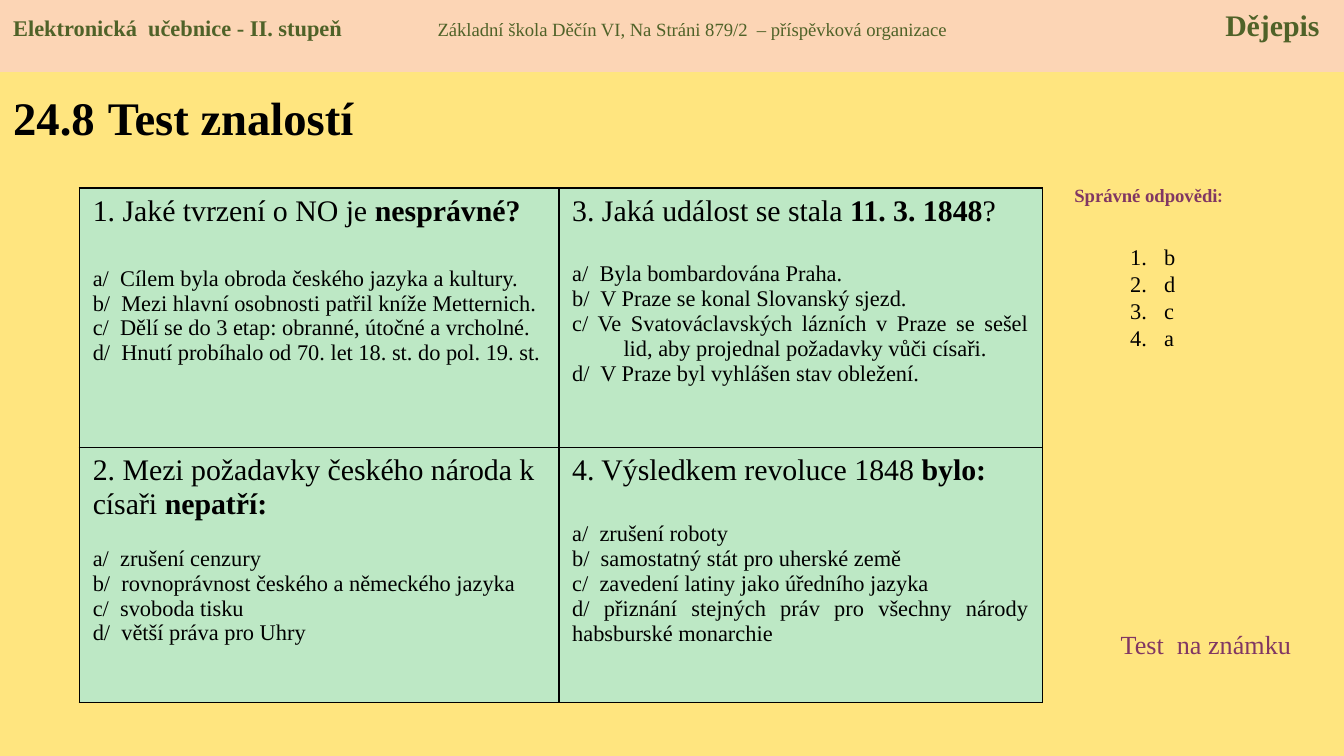
import lxml.etree
import pptx
import pptx.dml.color
import pptx.enum.shapes
import pptx.enum.text
import pptx.oxml
import pptx.oxml.ns
import pptx.util

Cm = pptx.util.Cm
Pt = pptx.util.Pt
ALIGN = pptx.enum.text.PP_ALIGN
ANCHOR = pptx.enum.text.MSO_ANCHOR

COLORS = {
    "background": "FFE57F",
    "header": "FCD5B5",
    "header_text": "4F6228",
    "cell": "BDE8C5",
    "accent": "813763",
    "text": "000000",
}


class TestSlide:
    """Holds the style and the current slide of the knowledge test."""

    font_name = "Times New Roman"

    def __init__(self, presentation):
        self.slide = presentation.slides.add_slide(presentation.slide_layouts[6])
        self.paint(self.slide.background.fill, "background")

    def color(self, name):
        return pptx.dml.color.RGBColor.from_string(COLORS[name])

    def paint(self, fill, name):
        fill.solid()
        fill.fore_color.rgb = self.color(name)

    def apply(self, target, values):
        for name, value in values.items():
            setattr(target, name, value)

    def add_paragraphs(self, frame, paragraphs, color="text"):
        frame.word_wrap = True
        for index, (runs, values) in enumerate(paragraphs):
            paragraph = frame.paragraphs[0] if index == 0 else frame.add_paragraph()
            self.apply(paragraph, values)
            for text, size, bold, *font_name in runs:
                run = paragraph.add_run()
                run.text = text
                font = {"size": Pt(size), "bold": bold, "name": (font_name or [self.font_name])[0]}
                self.apply(run.font, font)
                run.font.color.rgb = self.color(color)
        return frame.paragraphs

    def indent(self, paragraph, length):
        properties = paragraph._p.get_or_add_pPr()
        properties.set("marL", str(length))
        properties.set("indent", str(-length))
        return properties

    def text(self, box, paragraphs, color="text", anchor=ANCHOR.TOP):
        shape = self.slide.shapes.add_textbox(*map(Cm, box))
        shape.text_frame.vertical_anchor = anchor
        return self.add_paragraphs(shape.text_frame, paragraphs, color)

    def numbered_list(self, box, items):
        values = {"line_spacing": Pt(14.5)}
        for paragraph in self.text(box, [([(item, 12, False)], values) for item in items]):
            properties = self.indent(paragraph, Cm(0.64))
            number = lxml.etree.SubElement(properties, pptx.oxml.ns.qn("a:buAutoNum"))
            number.set("type", "arabicPeriod")

    def header(self, box, runs, tabs):
        rectangle = pptx.enum.shapes.MSO_SHAPE.RECTANGLE
        shape = self.slide.shapes.add_shape(rectangle, *map(Cm, box))
        shape.shadow.inherit = False
        shape.line.fill.background()
        self.paint(shape.fill, "header")
        shape.text_frame.vertical_anchor = ANCHOR.TOP
        paragraphs = self.add_paragraphs(
            shape.text_frame, [(runs, {"alignment": ALIGN.LEFT})], "header_text"
        )
        properties = paragraphs[0]._p.get_or_add_pPr()
        tab_list = lxml.etree.SubElement(properties, pptx.oxml.ns.qn("a:tabLst"))
        for position, alignment in tabs:
            tab = lxml.etree.SubElement(tab_list, pptx.oxml.ns.qn("a:tab"))
            tab.set("pos", str(Cm(position)))
            tab.set("algn", alignment)

    def border(self, cell):
        properties = cell._tc.get_or_add_tcPr()
        for side in ("lnL", "lnR", "lnT", "lnB"):
            properties.append(pptx.oxml.parse_xml(
                f'<a:{side} {pptx.oxml.ns.nsdecls("a")} w="{Pt(1)}"><a:solidFill>'
                f'<a:srgbClr val="{COLORS["text"]}"/></a:solidFill></a:{side}>'
            ))

    def question(self, cell, heading, options, gap, alignment, indent):
        self.border(cell)
        self.paint(cell.fill, "cell")
        runs = [(text, 16, bold) for text, bold in heading]
        paragraphs = [(runs, {"alignment": alignment})]
        for index, option in enumerate(options):
            values = {"alignment": alignment, "space_before": Pt(0 if index else gap)}
            paragraphs.append(([(option, 12, False)], values))
        for paragraph in self.add_paragraphs(cell.text_frame, paragraphs)[1:]:
            self.indent(paragraph, Cm(indent))

    def questions(self, left, top, widths, heights, rows):
        table = self.slide.shapes.add_table(
            len(heights), len(widths), Cm(left), Cm(top), Cm(sum(widths)), Cm(sum(heights))
        ).table
        self.apply(table, {"first_row": False, "horz_banding": False})
        for column, width in zip(table.columns, widths):
            column.width = Cm(width)
        for row, height, contents in zip(table.rows, heights, rows):
            row.height = Cm(height)
            for cell, content in zip(row.cells, contents):
                self.question(cell, *content)


QUESTIONS = [
    [
        (
            [("1. Jaké tvrzení o NO je ", False), ("nesprávné?", True)],
            [
                "a/  Cílem byla obroda českého jazyka a kultury.",
                "b/  Mezi hlavní osobnosti patřil kníže Metternich.",
                "c/  Dělí se do 3 etap: obranné, útočné a vrcholné.",
                "d/  Hnutí probíhalo od 70. let 18. st. do pol. 19. st.",
            ],
            20.7, ALIGN.JUSTIFY, 0.97,
        ),
        (
            [("3. Jaká událost se stala ", False), ("11. 3. 1848", True), ("?", False)],
            [
                "a/  Byla bombardována Praha.",
                "b/  V Praze se konal Slovanský sjezd.",
                "c/ Ve Svatováclavských lázních v Praze se sešel lid, "
                "aby projednal požadavky vůči císaři.",
                "d/  V Praze byl vyhlášen stav obležení.",
            ],
            18.4, ALIGN.JUSTIFY, 0.97,
        ),
    ],
    [
        (
            [("2. Mezi požadavky českého národa k císaři ", False), ("nepatří:", True)],
            [
                "a/  zrušení cenzury",
                "b/  rovnoprávnost českého a německého jazyka",
                "c/  svoboda tisku",
                "d/  větší práva pro Uhry",
            ],
            13.8, ALIGN.LEFT, 0.97,
        ),
        (
            [("4. Výsledkem revoluce 1848 ", False), ("bylo:", True)],
            [
                "a/  zrušení roboty",
                "b/  samostatný stát pro uherské země",
                "c/  zavedení latiny jako úředního jazyka",
                "d/ přiznání stejných práv pro všechny národy habsburské monarchie",
            ],
            18.4, ALIGN.JUSTIFY, 0,
        ),
    ],
]


def main():
    presentation = pptx.Presentation()
    presentation.slide_width = Cm(25.4)
    presentation.slide_height = Cm(14.29)
    test = TestSlide(presentation)
    title = [("24.8", 25, True), (" ", 28, True), ("Test znalostí", 25, True)]
    test.text((0, 1.35, 9.19, 1.65), [(title, {})], anchor=ANCHOR.MIDDLE)
    answers = [("Správné odpovědi", 10, True), (":", 10, True, "Calibri")]
    test.text((19.71, 3.35, 3.99, 0.69), [(answers, {"alignment": ALIGN.CENTER})], "accent")
    test.questions(1.5, 3.55, (9.06, 9.14), (4.91, 4.82), QUESTIONS)
    test.numbered_list((21.11, 4.47, 1.4, 2.79), "bdca")
    test.text((20.93, 11.76, 3.99, 0.86), [([("Test  na známku", 14, False)], {})], "accent")
    test.header(
        (0, 0, 25.4, 1.36),
        [
            ("Elektronická  učebnice - II. stupeň\t", 12, True),
            ("Základní škola Děčín VI, Na Stráni 879/2  – příspěvková organizace\t", 10, False),
            ("Dějepis", 16, True),
        ],
        [(8.02, "l"), (24.69, "r")],
    )
    presentation.save("out.pptx")


if __name__ == "__main__":
    main()
